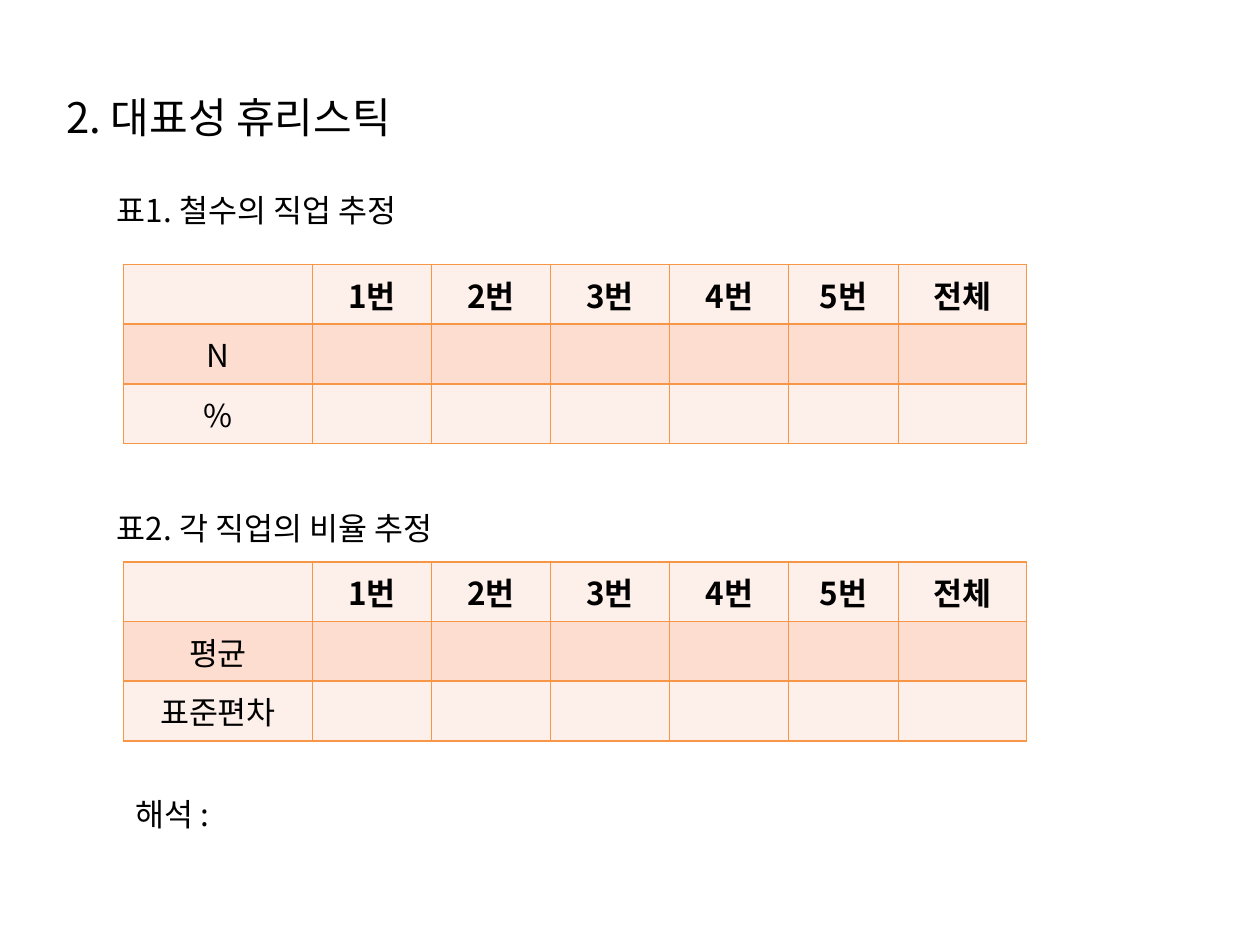
from lxml.etree import SubElement
from pptx import Presentation
from pptx.dml.color import RGBColor
from pptx.enum.text import MSO_ANCHOR, MSO_AUTO_SIZE, PP_ALIGN
from pptx.oxml.ns import qn
from pptx.util import Inches, Pt

FONT = "Noto Sans CJK KR"
BLACK = RGBColor(0x00, 0x00, 0x00)
PALE = RGBColor(0xFD, 0xEF, 0xE9)
PEACH = RGBColor(0xFC, 0xDD, 0xCF)
ORANGE = RGBColor(0xF7, 0x96, 0x46)

deck = Presentation()
deck.slide_width, deck.slide_height = Inches(10), Inches(7.5)
slide = deck.slides.add_slide(deck.slide_layouts[6])

# The slide is a grid of 100 columns by 100 rows.
COL = deck.slide_width / 100
ROW = deck.slide_height / 100


def write(frame, text, size=18, bold=False, align=PP_ALIGN.LEFT):
    para = frame.paragraphs[0]
    para.alignment = align
    run = para.add_run()
    run.text = text
    font = run.font
    font.name, font.size, font.bold = FONT, Pt(size), bold
    font.color.rgb = BLACK
    SubElement(run._r.get_or_add_rPr(), qn("a:ea"), typeface=FONT)


def frame_cell(cell):
    """Draw a thin orange border on all four sides, ahead of the fill."""
    props = cell._tc.get_or_add_tcPr()
    for spot, side in enumerate(("lnL", "lnR", "lnT", "lnB")):
        line = SubElement(props, qn(f"a:{side}"), w=str(Pt(1)))
        fill = SubElement(line, qn("a:solidFill"))
        SubElement(fill, qn("a:srgbClr"), val=str(ORANGE))
        props.insert(spot, line)


# Title, table captions and closing note: left, top, width, height, size
LABELS = [
    ("2. 대표성 휴리스틱", 4.3, 9.07, 65.4, 6.67, 24),
    ("표1. 철수의 직업 추정", 8.3, 19.6, 38.6, 5.33, 18),
    ("표2. 각 직업의 비율 추정", 8.3, 53.2, 38.6, 5.33, 18),
    ("해석 :", 9.8, 83.47, 34.6, 5.33, 18),
]
for text, left, top, wide, high, size in LABELS:
    box = slide.shapes.add_textbox(
        int(left * COL), int(top * ROW), int(wide * COL), int(high * ROW))
    box.text_frame.word_wrap = True
    box.text_frame.auto_size = MSO_AUTO_SIZE.SHAPE_TO_FIT_TEXT
    write(box.text_frame, text, size=size)

# Two answer tables with the same heads and grid
HEADS = ["", "1번", "2번", "3번", "4번", "5번", "전체"]
WIDTHS = [15] + [9.45] * 4 + [8.7, 10.2]
HIGH = 6.31
TABLES = [(28, ["N", "%"]), (59.47, ["평균", "표준편차"])]

for top, names in TABLES:
    rows = [HEADS] + [[name] + [""] * 6 for name in names]
    table = slide.shapes.add_table(
        len(rows), len(HEADS), int(9.8 * COL), int(top * ROW),
        int(sum(WIDTHS) * COL), int(len(rows) * HIGH * ROW)).table
    for column, wide in zip(table.columns, WIDTHS):
        column.width = int(wide * COL)
    for r, row in enumerate(rows):
        table.rows[r].height = int(HIGH * ROW)
        for c, text in enumerate(row):
            cell = table.cell(r, c)
            cell.vertical_anchor = MSO_ANCHOR.MIDDLE
            cell.fill.solid()
            cell.fill.fore_color.rgb = PEACH if r == 1 else PALE
            frame_cell(cell)
            if text:
                write(cell.text_frame, text, bold=r == 0,
                      align=PP_ALIGN.CENTER)

deck.save("out.pptx")
